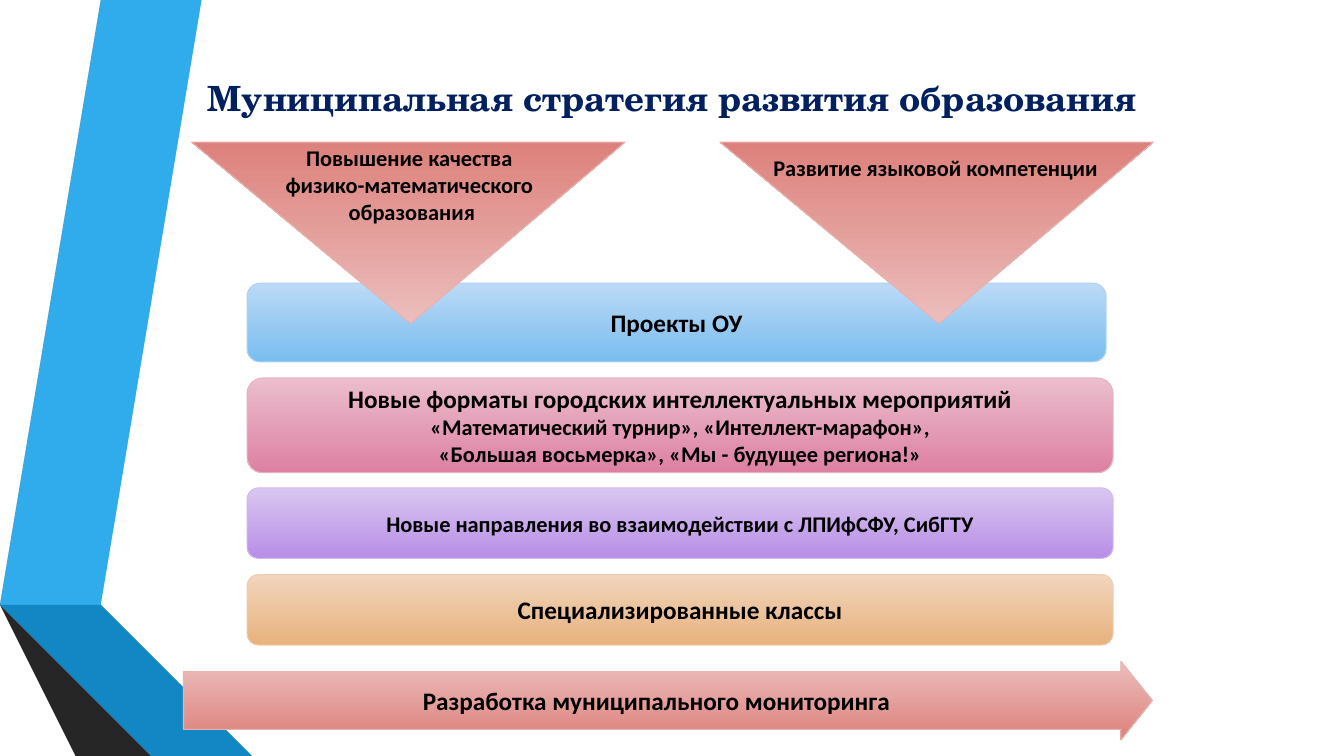
"""Build the slide on the municipal strategy for developing education."""
from dataclasses import dataclass

from pptx import Presentation
from pptx import util as u
from pptx.dml.color import RGBColor
from pptx.enum import shapes, text

COLORS = {
    "black": "000000", "navy": "002060",
    "sky": "30ACEC", "grey": "595959", "ink": "262626",
    "deep": "0C5A82", "blue": "1287C3", "charcoal": "404040",
    "blue_top": "BCDAF6", "blue_end": "78BDEF", "blue_line": "AED2F4",
    "red_top": "EBBEBC", "red_end": "DD817C", "red_line": "E8B2AF",
    "pink_top": "EBBECD", "pink_end": "DD80A2", "pink_line": "E8B1C3",
    "violet_top": "D9C6F1", "violet_end": "B88EE6", "violet_line": "D0B8EE",
    "sand_top": "F1D5BD", "sand_end": "E7B27D", "sand_line": "EECCAF",
}
PRESET = shapes.MSO_SHAPE


@dataclass(frozen=True)
class Band:
    color: str
    points: tuple[tuple[float, float], ...]


@dataclass(frozen=True)
class Block:
    preset: shapes.MSO_SHAPE
    box: tuple[float, float, float, float]
    tone: str
    label: str = ""
    sizes: tuple[float, ...] = (18,)
    adjust: tuple[float, ...] = ()
    rotation: float = 0


@dataclass(frozen=True)
class Caption:
    box: tuple[float, float, float, float]
    label: str
    size: float = 16
    font: str = "Calibri"
    color: str = "black"
    anchor: text.MSO_ANCHOR = text.MSO_ANCHOR.TOP


BANDS = (
    Band("sky", ((0.5, 5.78), (0.77, 5.83), (1.73, 0), (1.45, 0))),
    Band("grey", ((1.39, 0), (1.11, 0), (0.16, 5.73), (0.44, 5.77))),
    Band("ink", ((0.16, 5.73), (1.45, 7.5), (1.51, 7.5))),
    Band("deep", ((0.5, 5.79), (2.08, 7.5), (2.14, 7.5))),
    Band("blue", ((0.5, 5.78), (2.14, 7.5), (2.83, 7.5), (0.77, 5.83))),
    Band("charcoal", ((2.02, 7.5), (0.48, 5.83), (0.43, 5.77), (0.16, 5.73), (1.51, 7.5))),
)


def bar(top: float, height: float, tone: str, label: str,
        sizes: tuple[float, ...] = (18,), width: float = 8.59) -> Block:
    return Block(PRESET.ROUNDED_RECTANGLE, (2.45, top, width, height), tone, label, sizes)


def triangle(left: float) -> Block:
    return Block(PRESET.ISOSCELES_TRIANGLE, (left, 1.41, 4.3, 1.8), "red",
                 adjust=(0.495,), rotation=180)


ITEMS = (
    bar(2.81, 0.78, "blue", "Проекты ОУ", width=8.52),
    Caption((1.67, 0.62, 10, 0.7), "Муниципальная стратегия развития образования",
            24.8, "TeX Gyre Schola", "navy", text.MSO_ANCHOR.MIDDLE),
    triangle(1.9),
    Caption((1.98, 1.38, 4.16, 0.91),
            "Повышение качества\nфизико-математического\n образования"),
    triangle(7.14),
    Caption((7.41, 1.48, 3.74, 0.37), "Развитие языковой компетенции"),
    bar(3.75, 0.94, "pink",
        "Новые форматы городских интеллектуальных мероприятий\n"
        "«Математический турнир», «Интеллект-марафон»,\n"
        "«Большая восьмерка», «Мы - будущее региона!»", (18, 16, 16)),
    bar(4.84, 0.7, "violet", "Новые направления во взаимодействии с ЛПИфСФУ, СибГТУ", (16,)),
    bar(5.7, 0.7, "sand", "Специализированные классы"),
    Block(PRESET.RIGHT_ARROW, (1.82, 6.56, 9.61, 0.78), "red",
          "Разработка муниципального мониторинга", adjust=(0.733, 0.4)),
)


def rgb(name: str) -> RGBColor:
    return RGBColor.from_string(COLORS[name])


def write(tf, label: str, sizes: tuple[float, ...], font: str, color: str,
          anchor: text.MSO_ANCHOR) -> None:
    tf.text = label
    tf.word_wrap = True
    tf.vertical_anchor = anchor
    for p, size in zip(tf.paragraphs, sizes):
        p.alignment = text.PP_ALIGN.CENTER
        for r in p.runs:
            r.font.name = font
            r.font.size = u.Pt(size)
            r.font.bold = True
            r.font.color.rgb = rgb(color)


def draw_band(s, band: Band) -> None:
    first, *rest = band.points
    builder = s.shapes.build_freeform(*first, scale=u.Inches(1))
    builder.add_line_segments(rest, close=True)
    sp = builder.convert_to_shape()
    sp.shadow.inherit = False
    sp.fill.solid()
    sp.fill.fore_color.rgb = rgb(band.color)
    sp.line.fill.background()


def draw_block(s, block: Block) -> None:
    sp = s.shapes.add_shape(block.preset, *map(u.Inches, block.box))
    sp.shadow.inherit = False
    sp.rotation = block.rotation
    for i, value in enumerate(block.adjust):
        sp.adjustments[i] = value
    sp.fill.gradient()
    sp.fill.gradient_angle = 270
    for stop, end in zip(sp.fill.gradient_stops, ("top", "end")):
        stop.color.rgb = rgb(f"{block.tone}_{end}")
    sp.line.color.rgb = rgb(f"{block.tone}_line")
    sp.line.width = u.Pt(0.75)
    if block.label:
        write(sp.text_frame, block.label, block.sizes, "Calibri", "black",
              text.MSO_ANCHOR.MIDDLE)


def draw_caption(s, caption: Caption) -> None:
    sp = s.shapes.add_textbox(*map(u.Inches, caption.box))
    sizes = (caption.size,) * len(caption.label.split("\n"))
    write(sp.text_frame, caption.label, sizes, caption.font, caption.color, caption.anchor)


def main() -> None:
    prs = Presentation()
    prs.slide_width, prs.slide_height = u.Inches(13.33), u.Inches(7.5)
    s = prs.slides.add_slide(prs.slide_layouts[6])
    for band in BANDS:
        draw_band(s, band)
    for item in ITEMS:
        if isinstance(item, Block):
            draw_block(s, item)
        else:
            draw_caption(s, item)
    prs.save("out.pptx")


if __name__ == "__main__":
    main()
